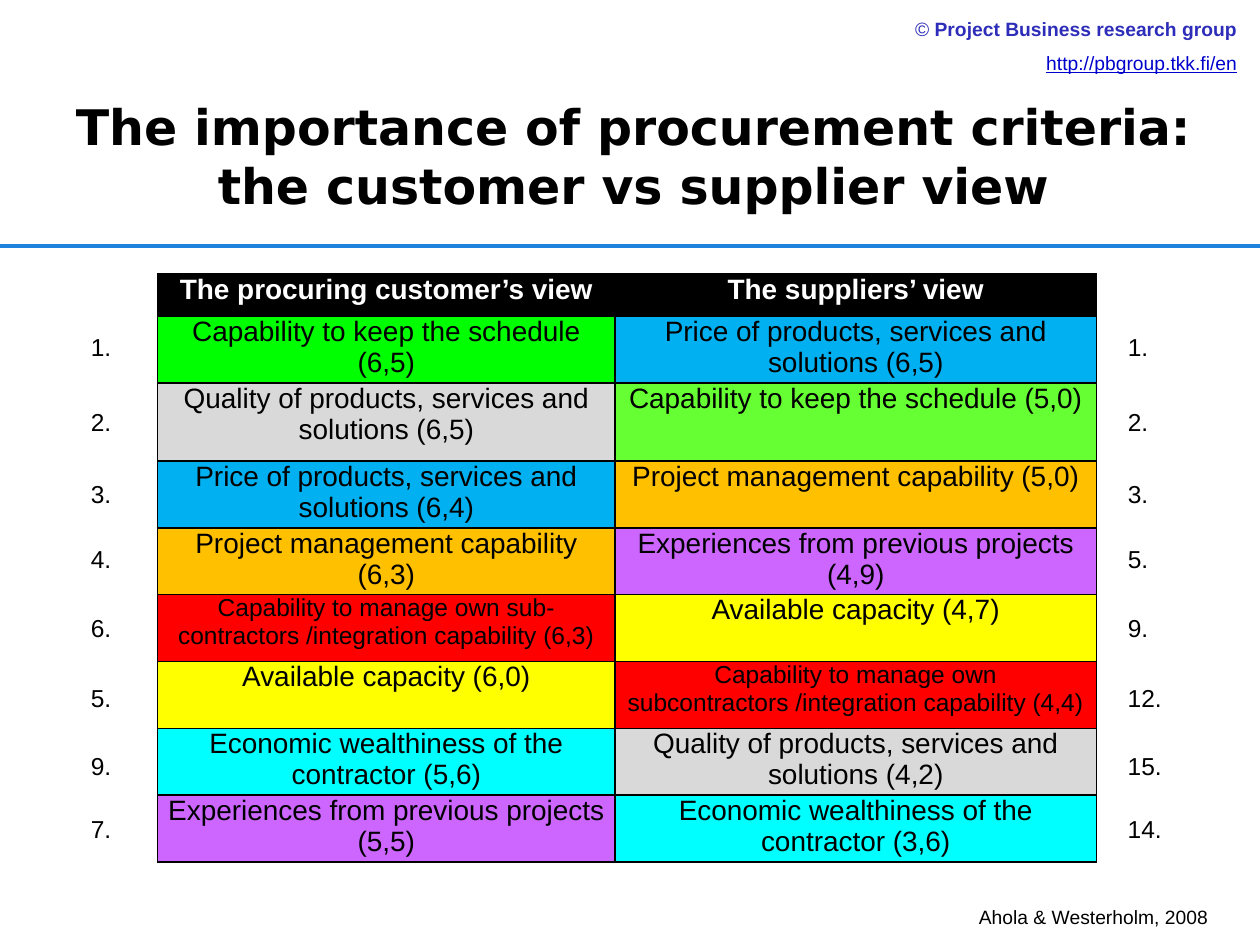
"""Build a slide comparing customer and supplier procurement criteria."""
from dataclasses import dataclass

from lxml.etree import SubElement
from pptx import Presentation
from pptx.dml.color import RGBColor
from pptx.enum.shapes import MSO_CONNECTOR
from pptx.enum.text import MSO_ANCHOR, MSO_AUTO_SIZE, PP_ALIGN
from pptx.oxml.ns import qn
from pptx.util import Pt


@dataclass(frozen=True)
class Theme:
    font: str = "Arial"
    title_font: str = "DejaVu Sans"
    title_size: float = 28
    cell_size: float = 16
    small_size: float = 14
    note_size: float = 11
    black: str = "000000"
    white: str = "FFFFFF"
    rule: str = "1D82DD"
    group: str = "2D2DB9"
    link: str = "0000CC"
    schedule: str = "00FF00"
    schedule_light: str = "66FF33"
    quality: str = "D9D9D9"
    price: str = "00B0F0"
    management: str = "FFC000"
    integration: str = "FF0000"
    capacity: str = "FFFF00"
    wealth: str = "00FFFF"
    experience: str = "CC66FF"


THEME = Theme()


@dataclass(frozen=True)
class Box:
    left: float
    top: float
    width: float
    height: float

    def lengths(self) -> tuple:
        return Pt(self.left), Pt(self.top), Pt(self.width), Pt(self.height)


@dataclass(frozen=True)
class Style:
    size: float
    color: str = THEME.black
    bold: bool = False
    underline: bool = False
    font: str = THEME.font


@dataclass(frozen=True)
class Criterion:
    text: str
    fill: str
    style: Style = Style(THEME.cell_size)


@dataclass(frozen=True)
class Ranking:
    customer_rank: str
    customer: Criterion
    supplier: Criterion
    supplier_rank: str
    rank_top: float
    height: float = 38.2


HEADING = Style(THEME.cell_size, THEME.white, bold=True)
SMALL = Style(THEME.small_size)
NOTE = Style(THEME.note_size)
HEADINGS = (
    Criterion("The procuring customer’s view", THEME.black, HEADING),
    Criterion("The suppliers’ view", THEME.black, HEADING),
)
RANKINGS = (
    Ranking("1.", Criterion("Capability to keep the schedule (6,5)", THEME.schedule),
            Criterion("Price of products, services and solutions (6,5)", THEME.price), "1.", 186),
    Ranking("2.", Criterion("Quality of products, services and solutions (6,5)", THEME.quality),
            Criterion("Capability to keep the schedule (5,0)", THEME.schedule_light), "2.", 229, 44.6),
    Ranking("3.", Criterion("Price of products, services and solutions (6,4)", THEME.price),
            Criterion("Project management capability (5,0)", THEME.management), "3.", 270),
    Ranking("4.", Criterion("Project management capability (6,3)", THEME.management),
            Criterion("Experiences from previous projects (4,9)", THEME.experience), "5.", 307.5),
    Ranking("6.", Criterion("Capability to manage own sub-contractors /integration capability (6,3)",
                            THEME.integration, SMALL),
            Criterion("Available capacity (4,7)", THEME.capacity), "9.", 347),
    Ranking("5.", Criterion("Available capacity (6,0)", THEME.capacity),
            Criterion("Capability to manage own subcontractors /integration capability (4,4)",
                      THEME.integration, SMALL), "12.", 386.5),
    Ranking("9.", Criterion("Economic wealthiness of the contractor (5,6)", THEME.wealth),
            Criterion("Quality of products, services and solutions (4,2)", THEME.quality), "15.", 425.5),
    Ranking("7.", Criterion("Experiences from previous projects (5,5)", THEME.experience),
            Criterion("Economic wealthiness of the contractor (3,6)", THEME.wealth), "14.", 461.5),
)
HEADING_HEIGHT = 24
COLUMN_WIDTHS = (261.5, 275)


def add_run(paragraph, text: str, style: Style) -> None:
    run = paragraph.add_run()
    run.text = text
    font = run.font
    font.name = style.font
    font.size = Pt(style.size)
    font.bold = style.bold
    font.underline = style.underline
    font.color.rgb = RGBColor.from_string(style.color)


def add_text(shapes, box: Box, lines: tuple, align: PP_ALIGN = PP_ALIGN.CENTER,
             anchor: MSO_ANCHOR = MSO_ANCHOR.TOP, wrap: bool = True) -> None:
    frame = shapes.add_textbox(*box.lengths()).text_frame
    frame.word_wrap = wrap
    frame.auto_size = MSO_AUTO_SIZE.NONE
    frame.vertical_anchor = anchor
    for index, runs in enumerate(lines):
        paragraph = frame.add_paragraph() if index else frame.paragraphs[0]
        paragraph.alignment = align
        if index:
            paragraph.space_before = Pt(6)
        for text, style in runs:
            add_run(paragraph, text, style)


def add_rule(shapes, top: float, width: float) -> None:
    rule = shapes.add_connector(MSO_CONNECTOR.STRAIGHT, Pt(0), Pt(top), Pt(width), Pt(top))
    rule.line.color.rgb = RGBColor.from_string(THEME.rule)
    rule.line.width = Pt(2.25)
    SubElement(rule._element.spPr, qn("a:effectLst"))


def fill_cell(cell, criterion: Criterion) -> None:
    properties = cell._tc.get_or_add_tcPr()
    for side in ("a:lnL", "a:lnR", "a:lnT", "a:lnB"):
        border = SubElement(properties, qn(side), w=str(Pt(1)))
        SubElement(SubElement(border, qn("a:solidFill")), qn("a:srgbClr"), val=THEME.black)
    cell.fill.solid()
    cell.fill.fore_color.rgb = RGBColor.from_string(criterion.fill)
    cell.margin_left = cell.margin_right = Pt(5)
    cell.margin_top = cell.margin_bottom = Pt(0)
    paragraph = cell.text_frame.paragraphs[0]
    paragraph.alignment = PP_ALIGN.CENTER
    add_run(paragraph, criterion.text, criterion.style)


def add_criteria(shapes) -> None:
    rows = [HEADINGS] + [(ranking.customer, ranking.supplier) for ranking in RANKINGS]
    heights = [HEADING_HEIGHT] + [ranking.height for ranking in RANKINGS]
    box = Box(90, 156.7, sum(COLUMN_WIDTHS), sum(heights))
    criteria = shapes.add_table(len(rows), len(COLUMN_WIDTHS), *box.lengths()).table
    criteria.first_row = criteria.horz_banding = False
    for column, width in zip(criteria.columns, COLUMN_WIDTHS):
        column.width = Pt(width)
    for row, height, views in zip(criteria.rows, heights, rows):
        row.height = Pt(height)
        for cell, criterion in zip(row.cells, views):
            fill_cell(cell, criterion)


def add_ranks(shapes, left: float, ranks: list[str]) -> None:
    group = shapes.add_group_shape()
    for ranking, rank in zip(RANKINGS, ranks):
        width = 26.3 if len(rank) == 2 else 34
        add_text(group.shapes, Box(left, ranking.rank_top, width, 24.2), (((rank, SMALL),),), wrap=False)


def main() -> None:
    deck = Presentation()
    deck.slide_width, deck.slide_height = Pt(720), Pt(540)
    shapes = deck.slides.add_slide(deck.slide_layouts[6]).shapes
    add_rule(shapes, 140.5, 720)
    add_text(shapes, Box(489.6, 6.5, 224.6, 40.3), (
        (("© ", Style(THEME.note_size, THEME.group)),
         ("Project Business research group", Style(THEME.note_size, THEME.group, bold=True))),
        (("http://pbgroup.tkk.fi/en", Style(THEME.note_size, THEME.link, underline=True)),),
    ), PP_ALIGN.RIGHT)
    title = Style(THEME.title_size, bold=True, font=THEME.title_font)
    add_text(shapes, Box(14.4, 49, 694.8, 80), (
        (("The importance of procurement criteria: the customer vs supplier view", title),),
    ), anchor=MSO_ANCHOR.MIDDLE)
    add_criteria(shapes)
    add_ranks(shapes, 44.6, [ranking.customer_rank for ranking in RANKINGS])
    add_ranks(shapes, 637.2, [ranking.supplier_rank for ranking in RANKINGS])
    add_text(shapes, Box(541.4, 514, 167, 20.9), ((("Ahola & Westerholm, 2008", NOTE),),))
    deck.save("out.pptx")


if __name__ == "__main__":
    main()
